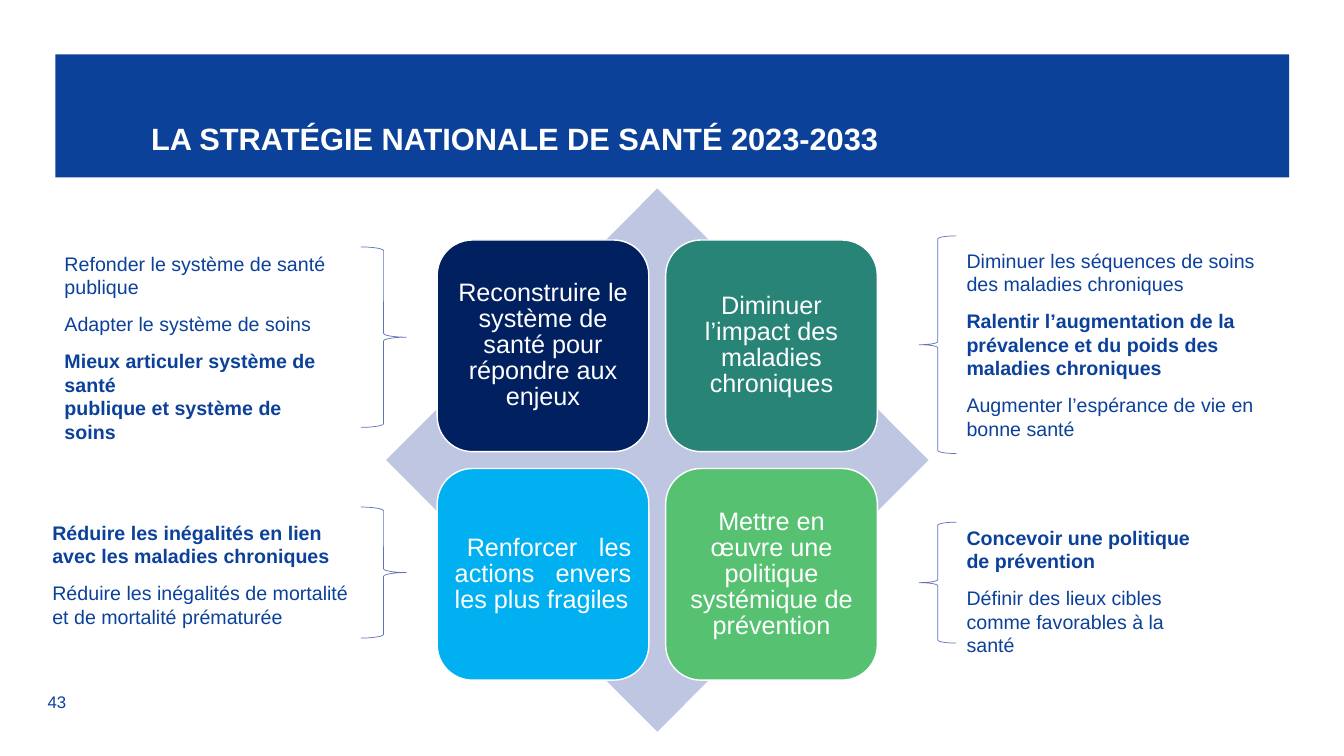
from pptx import Presentation
from pptx.dml.color import RGBColor
from pptx.enum.shapes import MSO_SHAPE as Preset
from pptx.enum.text import MSO_ANCHOR as Anchor, PP_ALIGN as Align
from pptx.util import Pt

BLUE = RGBColor(0x0C, 0x41, 0x9A)
WHITE = RGBColor(0xFF, 0xFF, 0xFF)
LAVENDER = RGBColor(0xBE, 0xC6, 0xE2)
NAVY = RGBColor(0x00, 0x20, 0x60)
TEAL = RGBColor(0x29, 0x84, 0x78)
SKY = RGBColor(0x00, 0xB0, 0xF0)
GREEN = RGBColor(0x56, 0xC2, 0x71)
BRACE_BLUE = RGBColor(0x5E, 0x74, 0xB8)

TITLE = "LA STRATÉGIE NATIONALE DE SANTÉ 2023-2033"

CARDS = [
    ("Reconstruire le système de santé pour répondre aux enjeux", NAVY, 6.6, Align.CENTER),
    ("Diminuer l’impact des maladies chroniques", TEAL, 19.6, Align.CENTER),
    ("Renforcer les actions envers les plus fragiles", SKY, 5.2, Align.JUSTIFY),
    ("Mettre en œuvre une politique systémique de prévention", GREEN, 9.1, Align.CENTER),
]

GOALS = [
    ("left", (46.1, 176.4, 244.1, 128.9), 3.3, [
        ("Refonder le système de santé publique", False, 0, 0),
        ("Adapter le système de soins", False, 9.6, 0),
        ("Mieux articuler système de santé", True, 9.7, 0),
        ("publique et système de soins", True, 0, 24),
    ]),
    ("left", (37.4, 362.2, 252.8, 93.6), 9.6, [
        ("Réduire les inégalités en lien avec les maladies chroniques", True, 0, 0),
        ("Réduire les inégalités de mortalité et de mortalité prématurée", False, 9.7, 0),
    ]),
    ("right", (656.6, 168.5, 241.4, 155.5), 9, [
        ("Diminuer les séquences de soins des maladies chroniques", False, 0, 0),
        ("Ralentir l’augmentation de la prévalence et du poids des maladies chroniques",
         True, 9.6, 0),
        ("Augmenter l’espérance de vie en bonne santé", False, 9.7, 0),
    ]),
    ("right", (656.6, 373, 241.4, 86.4), 2.4, [
        ("Concevoir une politique de prévention", True, 0, 40),
        ("Définir des lieux cibles comme favorables à la santé", False, 9.6, 0),
    ]),
]


def place(box):
    return [Pt(length) for length in box]


def apply(target, formats):
    for name, value in formats.items():
        setattr(target, name, value)


def set_frame(shape, anchor=Anchor.TOP, left=0, top=0, right=0):
    frame = shape.text_frame
    apply(frame, {"word_wrap": True, "vertical_anchor": anchor, "margin_left": Pt(left),
                  "margin_top": Pt(top), "margin_right": Pt(right), "margin_bottom": 0})
    return frame


def write(para, text, size, color, bold=False, **formats):
    apply(para, formats)
    span = para.add_run()
    span.text = text
    apply(span.font, {"name": "Arial", "size": Pt(size), "bold": bold})
    span.font.color.rgb = color


def add_preset(slide, preset, box, fill=None, line=None, weight=1):
    shape = slide.shapes.add_shape(preset, *place(box))
    shape.shadow.inherit = False
    if fill is None:
        shape.fill.background()
    else:
        shape.fill.solid()
        shape.fill.fore_color.rgb = fill
    if line is None:
        shape.line.fill.background()
    else:
        shape.line.color.rgb = line
        shape.line.width = Pt(weight)
    return shape


def build_title(slide, box):
    banner = add_preset(slide, Preset.RECTANGLE, box, BLUE)
    frame = set_frame(banner, Anchor.MIDDLE, left=68.4, top=32)
    write(frame.paragraphs[0], TITLE, 22, WHITE, True, alignment=Align.LEFT)


def build_cards(slide, box):
    left, top, width, height = box
    add_preset(slide, Preset.DIAMOND, box, LAVENDER)
    side, pitch = 151.2, 163.2
    first_left = left + (width - side - pitch) / 2
    first_top = top + (height - side - pitch) / 2
    for index, (text, fill, inset, alignment) in enumerate(CARDS):
        row, column = divmod(index, 2)
        card_box = (first_left + column * pitch, first_top + row * pitch, side, side)
        card = add_preset(slide, Preset.ROUNDED_RECTANGLE, card_box, fill, WHITE)
        frame = set_frame(card, Anchor.MIDDLE, left=inset, right=inset)
        para = frame.paragraphs[0]
        if alignment == Align.JUSTIFY:
            para._p.get_or_add_pPr().set("indent", str(Pt(8.6)))
        write(para, text, 18, WHITE, alignment=alignment, line_spacing=0.86)


def build_goals(slide, side, box, drop, goals):
    left, top, width, height = box
    if side == "left":
        brace_width, gap, preset = 32.4, 0, Preset.RIGHT_BRACE
        text_left, brace_left = left, left + width - brace_width
    else:
        brace_width, gap, preset = 26.6, 7.2, Preset.LEFT_BRACE
        text_left, brace_left = left + brace_width + gap, left
    add_preset(slide, preset, (brace_left, top, brace_width, height),
               line=BRACE_BLUE, weight=0.5)
    text_box = (text_left, top + drop, width - brace_width - gap, height - drop)
    frame = set_frame(slide.shapes.add_textbox(*place(text_box)))
    for index, (text, bold, before, right) in enumerate(goals):
        para = frame.add_paragraph() if index else frame.paragraphs[0]
        if right:
            para._p.get_or_add_pPr().set("marR", str(Pt(right)))
        write(para, text, 14, BLUE, bold, space_before=Pt(before))


def build_page_number(slide, box):
    frame = set_frame(slide.shapes.add_textbox(*place(box)), Anchor.MIDDLE, left=3)
    write(frame.paragraphs[0], "43", 12, BLUE, line_spacing=Pt(14.2))


def main():
    deck = Presentation()
    apply(deck, {"slide_width": Pt(960), "slide_height": Pt(540)})
    page = deck.slides.add_slide(deck.slide_layouts[6])
    build_title(page, (39.6, 38.9, 881.3, 87.8))
    build_cards(page, (275.8, 134.6, 387.4, 388.1))
    for side, box, drop, goals in GOALS:
        build_goals(page, side, box, drop, goals)
    build_page_number(page, (31, 490.3, 56.9, 22.3))
    deck.save("out.pptx")


if __name__ == "__main__":
    main()
